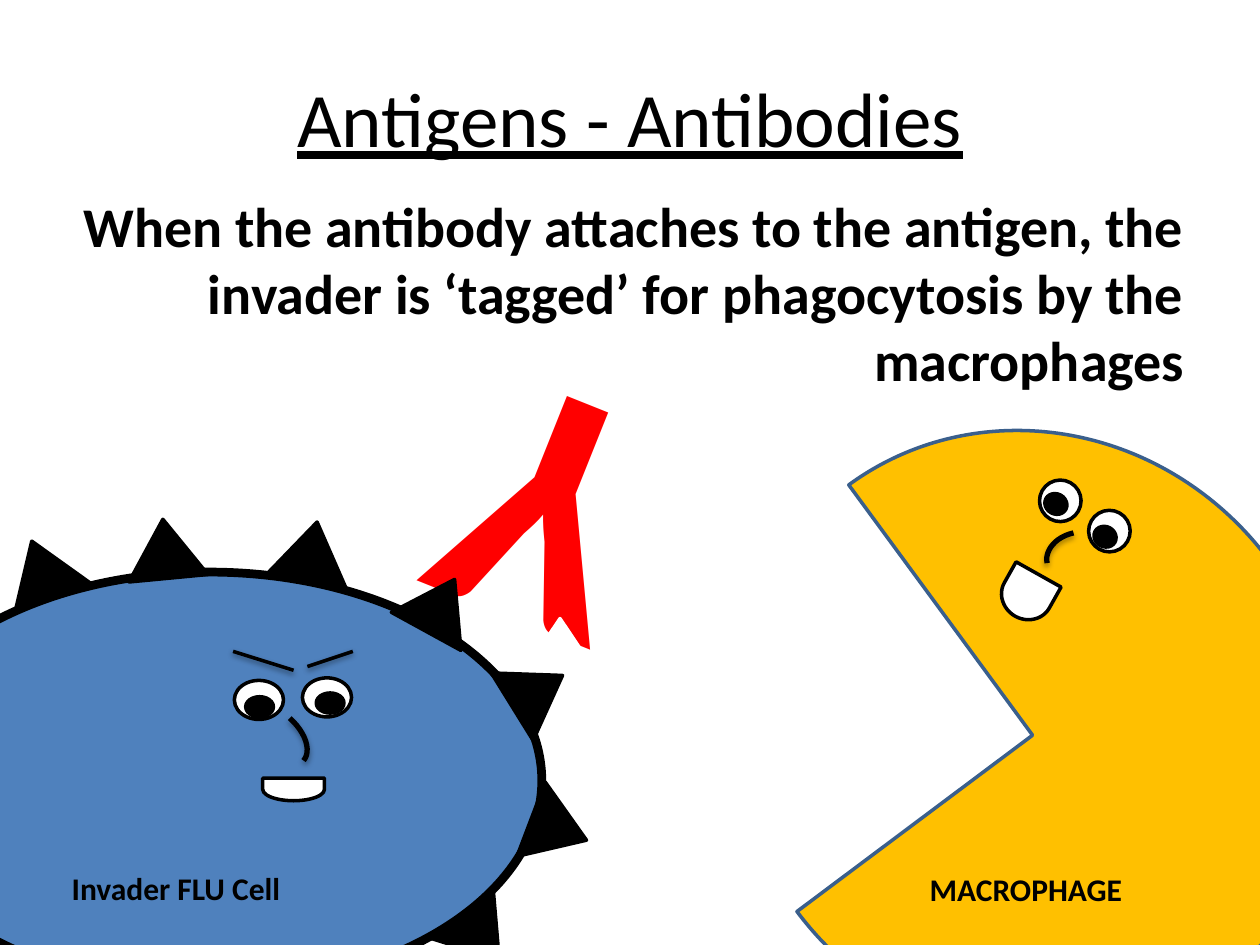
import pptx
import pptx.util
import pptx.dml.color
import pptx.enum.shapes
import pptx.enum.text
import pptx.oxml
import pptx.oxml.ns

Inches, Pt = pptx.util.Inches, pptx.util.Pt
KIND = pptx.enum.shapes.MSO_SHAPE
ALIGN = pptx.enum.text.PP_ALIGN
ANCHOR = pptx.enum.text.MSO_ANCHOR
BLACK, WHITE, RED = "000000", "FFFFFF", "FF0000"
BLUE, GOLD, NAVY = "4F81BD", "FFC000", "3A5F8C"

# Content
TITLE = "Antigens - Antibodies"
BODY = ("When the antibody attaches to the antigen, the invader is "
        "‘tagged’ for phagocytosis by the macrophages")
FLU = "Invader FLU Cell"
EATER = "MACROPHAGE"

# Spikes round the flu cell: left, top, turn
SPIKES = [(3.18, 4.57, 28.7), (2.16, 4.14, 10.2), (1, 4.12, 354.6),
          (3.95, 5.25, 58.2), (4.12, 6.35, 110.8), (0.02, 4.28, 339.4),
          (3.5, 7.2, 141.3)]
SPIKE = (0.63, 0.47)

# Faces: eyes and pupils as (left, top), nose and mouth as (box, turn)
FACES = {
    "flu": dict(eyes=[(2.4, 5.38), (1.86, 5.4)], eye=(0.39, 0.31),
                pupils=[(2.51, 5.5), (1.95, 5.53)], pupil=(0.22, 0.16), tilt=0,
                nose=((2, 5.53, 0.36, 0.61), 131.4), sweep=(108, 162),
                mouth=((2.24, 6.02, 0.18, 0.49), 90)),
    "eater": dict(eyes=[(8.25, 3.81), (8.64, 4.05)], eye=(0.33, 0.33),
                  pupils=[(8.29, 3.92), (8.68, 4.18)], pupil=(0.18, 0.16), tilt=29.3,
                  nose=((8.37, 4.16, 0.38, 0.51), 257.9), sweep=(162, 0),
                  mouth=((7.96, 4.52, 0.38, 0.41), 119.3)),
}
BROWS = [(1.85, 5.17, 2.33, 5.32), (2.44, 5.29, 2.8, 5.17)]

deck = pptx.Presentation()
deck.slide_width, deck.slide_height = Inches(10), Inches(7.5)
slide = deck.slides.add_slide(deck.slide_layouts[6])


def rgb(code):
    return pptx.dml.color.RGBColor.from_string(code)


def shade(item, alpha, dist):
    """Give a stroke a soft shadow straight below it."""
    props = item._element.spPr
    for old in props.findall(pptx.oxml.ns.qn("a:effectLst")):
        props.remove(old)
    props.append(pptx.oxml.parse_xml(
        f'<a:effectLst {pptx.oxml.ns.nsdecls("a")}>'
        f'<a:outerShdw blurRad="{Pt(3.1)}" dist="{Pt(dist)}" dir="5400000" rotWithShape="0">'
        f'<a:srgbClr val="{BLACK}"><a:alpha val="{alpha * 1000}"/></a:srgbClr>'
        '</a:outerShdw></a:effectLst>'))


def draw(kind, box, fill=None, line=BLACK, width=2, turn=0, adj=()):
    item = slide.shapes.add_shape(kind, *map(Inches, box))
    for i, value in enumerate(adj):
        item.adjustments[i] = value
    item.rotation = turn
    if fill:
        item.fill.solid()
        item.fill.fore_color.rgb = rgb(fill)
    else:
        item.fill.background()
    item.line.color.rgb = rgb(line)
    item.line.width = Pt(width)
    item.shadow.inherit = False
    return item


def write(text, box, size=18, color=BLACK, bold=True, under=False, align=ALIGN.LEFT,
          anchor=ANCHOR.TOP, wrap=True, turn=0, before=0):
    item = slide.shapes.add_textbox(*map(Inches, box))
    item.rotation = turn
    frame = item.text_frame
    frame.word_wrap = wrap
    frame.vertical_anchor = anchor
    par = frame.paragraphs[0]
    par.alignment = align
    par.space_before = Pt(before)
    run = par.add_run()
    run.text = text
    font = run.font
    font.name, font.size, font.bold, font.underline = "Calibri", Pt(size), bold, under
    font.color.rgb = rgb(color)


def face(eyes, eye, pupils, pupil, tilt, nose, sweep, mouth):
    for spots, size, fill in ((eyes, eye, WHITE), (pupils, pupil, BLACK)):
        for spot in spots:
            draw(KIND.OVAL, spot + size, fill, turn=tilt)
    arc = draw(KIND.ARC, nose[0], width=3, turn=nose[1], adj=sweep)
    shade(arc, 35, 1.8)
    draw(KIND.FLOWCHART_DELAY, mouth[0], WHITE, turn=mouth[1])


# Antibody: a turned letter with notches cut in its arms
write("Y", (3.43, 2.49, 1.66, 3.47), size=200, color=RED, align=ALIGN.CENTER,
      wrap=False, turn=201.8)
draw(KIND.ISOSCELES_TRIANGLE, (4.13, 4.91) + SPIKE, WHITE, WHITE)
draw(KIND.RIGHT_ARROW, (5.72, 3.11, 0.47, 0.38), WHITE, WHITE, turn=102.5)

# Heading and statement
write(TITLE, (0.5, 0.3, 9, 1.25), size=44, bold=False, under=True,
      align=ALIGN.CENTER, anchor=ANCHOR.MIDDLE)
write(BODY, (0.5, 1.47, 9, 2.6), size=32, align=ALIGN.RIGHT, before=6.4)

# Flu cell
draw(KIND.OVAL, (-0.98, 4.54, 5.28, 3.31), BLUE, width=5)
for left, top, turn in SPIKES:
    draw(KIND.ISOSCELES_TRIANGLE, (left, top) + SPIKE, BLACK, turn=turn)
face(**FACES["flu"])
for ends in BROWS:
    brow = slide.shapes.add_connector(pptx.enum.shapes.MSO_CONNECTOR.STRAIGHT,
                                      *map(Inches, ends))
    brow.line.color.rgb = rgb(BLACK)
    brow.line.width = Pt(2)
    shade(brow, 38, 1.6)
write(FLU, (0.47, 6.85, 2.38, 0.4))

# Macrophage
draw(KIND.PIE, (5.73, 3.5, 4.93, 4.67), GOLD, NAVY, turn=233.2, adj=(0.31, 162))
write(EATER, (7.28, 6.86, 1.82, 0.4))
face(**FACES["eater"])

deck.save("out.pptx")
